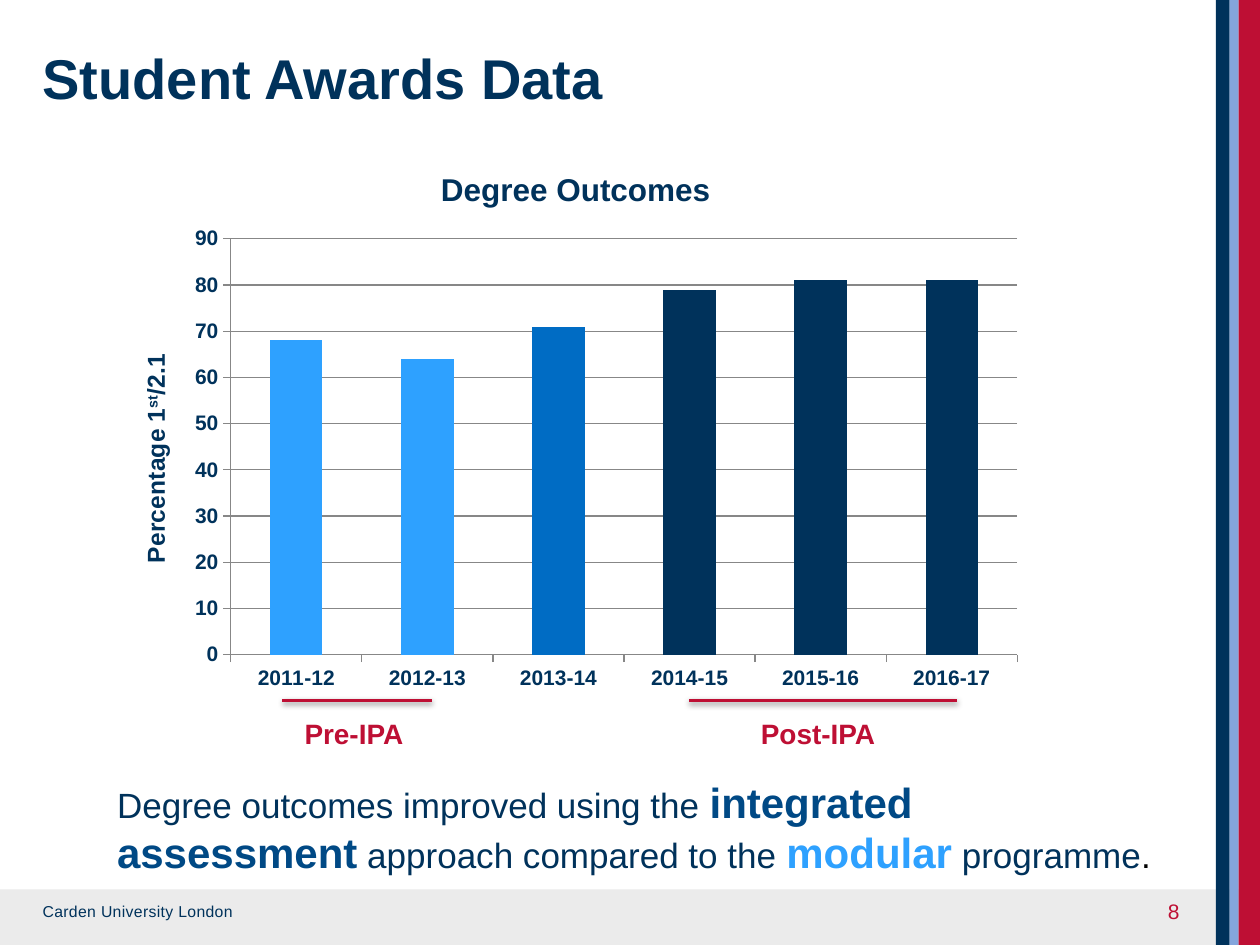
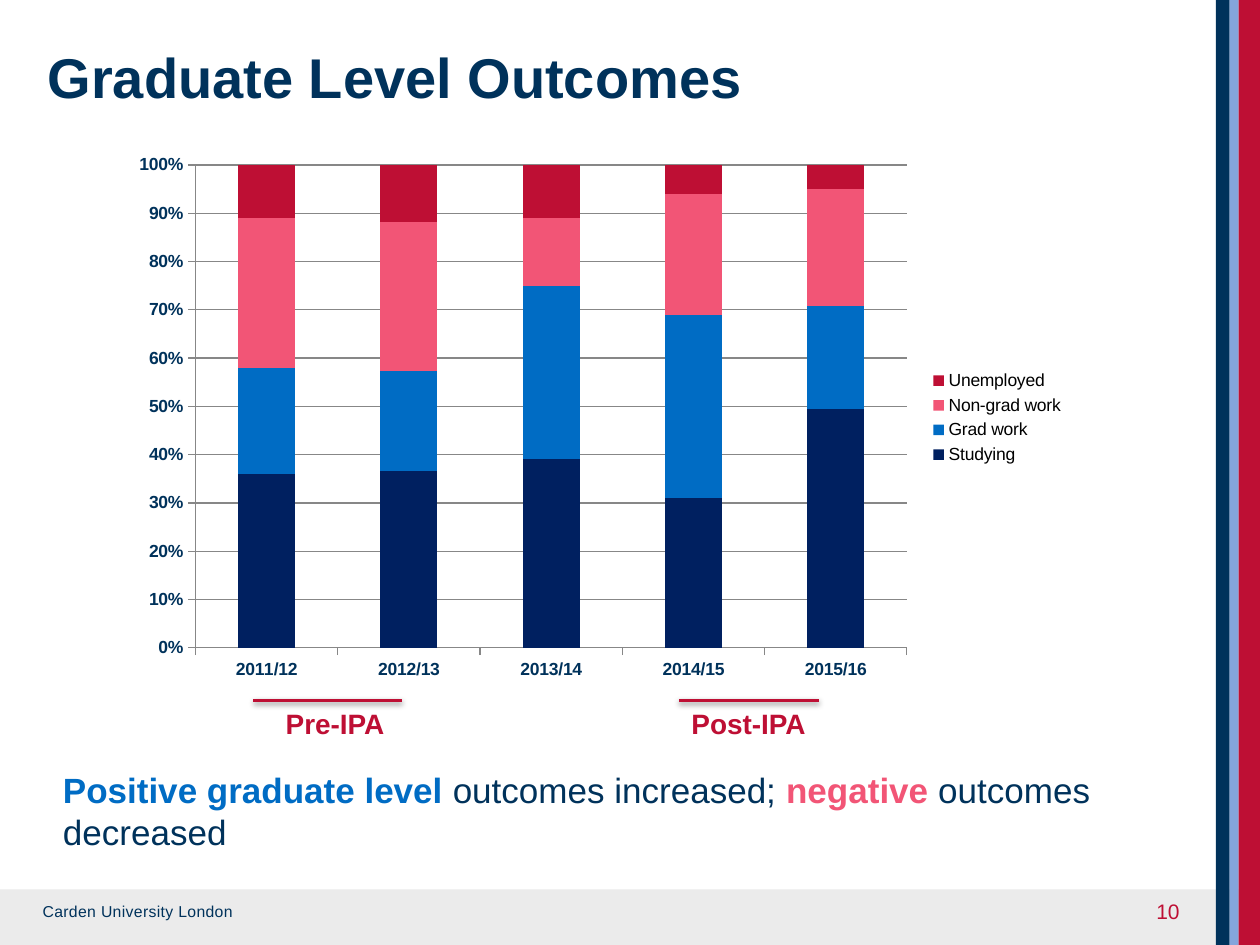
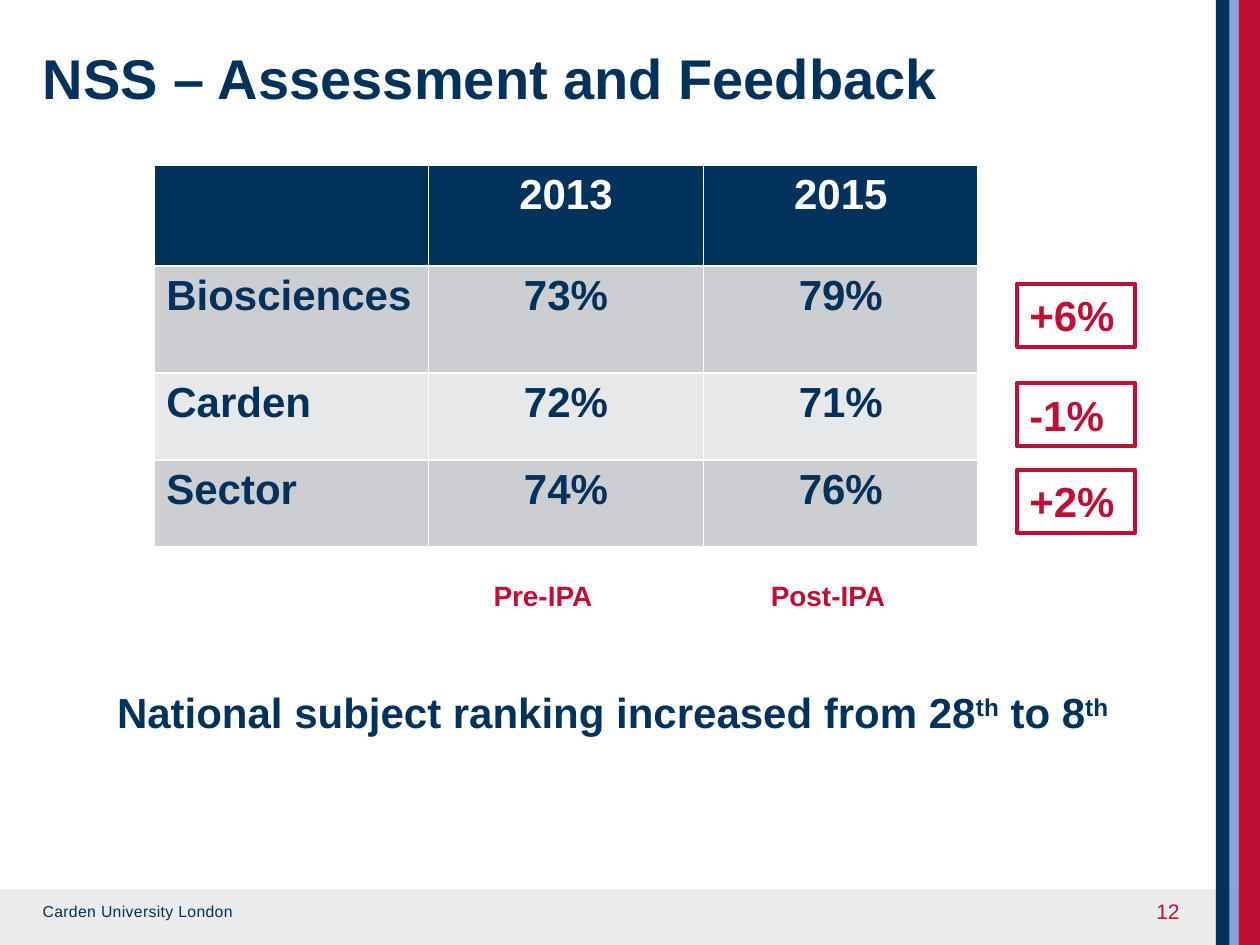
from lxml import etree
from pptx import Presentation
from pptx.chart.data import CategoryChartData
from pptx.dml.color import RGBColor
from pptx.enum.chart import XL_CHART_TYPE, XL_LEGEND_POSITION, XL_TICK_MARK
from pptx.enum.shapes import MSO_CONNECTOR, MSO_SHAPE
from pptx.enum.text import MSO_ANCHOR, PP_ALIGN
from pptx.oxml.ns import qn
from pptx.util import Cm, Pt

RECTANGLE = MSO_SHAPE.RECTANGLE
STRAIGHT = MSO_CONNECTOR.STRAIGHT
LEFT, CENTER, RIGHT = PP_ALIGN.LEFT, PP_ALIGN.CENTER, PP_ALIGN.RIGHT
TOP, MIDDLE = MSO_ANCHOR.TOP, MSO_ANCHOR.MIDDLE
CLUSTERED = XL_CHART_TYPE.COLUMN_CLUSTERED
STACKED = XL_CHART_TYPE.COLUMN_STACKED_100
TICK_OUTSIDE = XL_TICK_MARK.OUTSIDE
LEGEND_RIGHT = XL_LEGEND_POSITION.RIGHT

FONT = "Arial"
NAVY, RED, PALE_BLUE, FOOTER_GREY = "00325B", "BE0F34", "84A5DC", "EBEBEB"
BLUE, BRIGHT_BLUE, DEEP_BLUE, PINK = "006CC4", "2EA1FF", "004985", "F25576"
MIDNIGHT, BLACK, WHITE, GRID_GREY = "002060", "000000", "FFFFFF", "878787"
ROW_FILLS = ("CCCED2", "E7E8EA")

# All areas are (left, top, width, height) in centimetres.
WIDTH, HEIGHT = 25.4, 19.05
FOOTER_TOP = 17.93
FOOTER_TEXT = "Carden University London"
SIDE_BANDS = [(NAVY, 0.28), (PALE_BLUE, 0.18), (RED, 0.43)]
TITLE_AREA = (0.61, 0.76, 23.11, 2.57)
PERIODS = ("Pre-IPA", "Post-IPA")
RULE_TOP = 14.12

# A span is its text and the settings that differ from its paragraph.
AWARDS = {
    "title": "Student Awards Data", "number": 8, "title_area": TITLE_AREA,
    "periods": {"lefts": (5.89, 15.09), "top": 14.33},
    "rules": [(5.69, 8.71), (13.89, 19.3)],
    "summary": {"area": (2.11, 15.52, 21.59, 2.31), "size": 20, "spans": [
        ("Degree outcomes improved using the ", {}),
        ("integrated assessment", {"size": 24, "colour": DEEP_BLUE, "bold": True}),
        (" approach compared to the ", {}),
        ("modular", {"size": 24, "colour": BRIGHT_BLUE, "bold": True}),
        (" programme", {}),
        (".", {"colour": BLACK})]},
}
AWARDS_CHART = {
    "kind": CLUSTERED, "area": (2.31, 2.92, 18.59, 11.2),
    "plot": (0.126, 0.169, 0.853, 0.749), "axis_size": 12,
    "categories": ["2011-12", "2012-13", "2013-14", "2014-15", "2015-16", "2016-17"],
    "series": [("Series 1", [68, 64, 71, 79, 81, 81], NAVY)],
}
AWARDS_CHART_TITLE = [("Degree Outcomes", {})]
AWARDS_AXIS_TITLE = [("Percentage 1", {}), ("st", {"raised": True}), ("/2.1", {})]
AWARDS_BARS = [BRIGHT_BLUE, BRIGHT_BLUE, BLUE, NAVY, NAVY, NAVY]

GRADUATES = {
    "title": "Graduate Level Outcomes", "number": 10,
    "title_area": (0.71, 0.74, 23.11, 2.01),
    "periods": {"lefts": (5.51, 13.69), "top": 14.12},
    "rules": [(5.11, 8.1), (13.69, 16.51)],
    "summary": {"area": (1.02, 15.37, 22.33, 1.96), "size": 20, "spans": [
        ("Positive graduate level ", {"colour": BLUE, "bold": True}),
        ("outcomes increased; ", {}),
        ("negative ", {"colour": PINK, "bold": True}),
        ("outcomes decreased", {})]},
}
GRADUATES_CHART = {
    "kind": STACKED, "area": (2.46, 2.92, 19.25, 11),
    "plot": (0.077, 0.037, 0.745, 0.885), "axis_size": 10,
    "categories": ["2011/12", "2012/13", "2013/14", "2014/15", "2015/16"],
    "series": [
        ("Studying", [36, 37, 39, 31, 49], MIDNIGHT),
        ("Grad work", [22, 21, 36, 38, 21], BLUE),
        ("Non-grad work", [31, 31, 14, 25, 24], PINK),
        ("Unemployed", [11, 12, 11, 6, 5], RED)],
}

SURVEY = {
    "title": "NSS – Assessment and Feedback", "number": 12, "title_area": TITLE_AREA,
    "periods": {"lefts": (9.7, 15.29), "top": 11.53},
    "rules": [],
    "summary": {"area": (2.11, 13.72, 21.59, 1.27), "size": 24, "bold": True, "spans": [
        ("National subject ranking increased from 28", {}), ("th", {"raised": True}),
        (" to 8", {}), ("th", {"raised": True})]},
}
SURVEY_ROWS = [
    ("", "2013", "2015"),
    ("Biosciences", "73%", "79%"),
    ("Carden", "72%", "71%"),
    ("Sector", "74%", "76%"),
]
SURVEY_ROW_HEIGHTS = (2.03, 2.16, 1.75, 1.75)
SURVEY_COLUMN_WIDTH = 5.54
SURVEY_CHANGES = [("+6%", 5.72), ("-1%", 7.72), ("+2%", 9.47)]


def rgb(colour):
    return RGBColor.from_string(colour)


def lengths(area):
    return [Cm(value) for value in area]


def set_font(font, size=None, colour=None, bold=None):
    """Change only the settings that are given."""
    if size:
        font.size = Pt(size)
    if colour:
        font.color.rgb = rgb(colour)
    if bold is not None:
        font.bold = bold


def write(frame, spans, size, colour=NAVY, bold=False, align=LEFT, spacing=None):
    """Fill the first paragraph of a text frame with spans."""
    para = frame.paragraphs[0]
    para.alignment = align
    para.font.name = FONT
    set_font(para.font, size, colour, bold)
    for text, changes in spans:
        span = para.add_run()
        span.text = text
        set_font(span.font, changes.get("size"), changes.get("colour"), changes.get("bold"))
        if changes.get("raised"):
            span._r.get_or_add_rPr().set("baseline", "30000")
        if spacing:
            span._r.get_or_add_rPr().set("spc", str(spacing))


def add_text(page, area, spans, size, anchor=TOP, **style):
    frame = page.shapes.add_textbox(*lengths(area)).text_frame
    frame.word_wrap = True
    frame.vertical_anchor = anchor
    write(frame, spans, size, **style)


def add_band(page, area, colour):
    band = page.shapes.add_shape(RECTANGLE, *lengths(area))
    band.shadow.inherit = False
    band.fill.solid()
    band.fill.fore_color.rgb = rgb(colour)
    band.line.fill.background()


def add_rule(page, start, end):
    """Draw a period rule with a soft shadow below it."""
    rule = page.shapes.add_connector(
        STRAIGHT, Cm(start), Cm(RULE_TOP), Cm(end), Cm(RULE_TOP))
    rule.line.color.rgb = rgb(RED)
    rule.line.width = Pt(2)
    effects = etree.SubElement(rule._element.spPr, qn("a:effectLst"))
    shadow = etree.SubElement(effects, qn("a:outerShdw"), blurRad="40000", dist="20000",
                              dir="5400000", rotWithShape="0")
    tint = etree.SubElement(shadow, qn("a:srgbClr"), val=BLACK)
    etree.SubElement(tint, qn("a:alpha"), val="38000")


def add_page(deck, content):
    """Add a slide with the shared frame, title, period labels and summary."""
    page = deck.slides.add_slide(deck.slide_layouts[6])
    add_band(page, (0, FOOTER_TOP, WIDTH, HEIGHT - FOOTER_TOP), FOOTER_GREY)
    left = WIDTH - sum(width for _, width in SIDE_BANDS)
    for colour, width in SIDE_BANDS:
        add_band(page, (left, 0, width, HEIGHT), colour)
        left += width
    add_text(page, (0.61, 18.06, 4.5, 0.63), [(FOOTER_TEXT, {})], 9, spacing=20)
    add_text(page, (18.11, 17.86, 5.92, 1.02), [(str(content["number"]), {})], 12,
             anchor=MIDDLE, colour=RED, align=RIGHT)
    add_text(page, content["title_area"], [(content["title"], {})], 32, bold=True)

    periods = content["periods"]
    for period, left in zip(PERIODS, periods["lefts"]):
        add_text(page, (left, periods["top"], 3.2, 0.94), [(period, {})], 16,
                 colour=RED, bold=True)
    for start, end in content["rules"]:
        add_rule(page, start, end)
    summary = content["summary"]
    add_text(page, summary["area"], summary["spans"], summary["size"],
             bold=summary.get("bold", False))
    return page


def place_plot(chart, fractions):
    """Fix the inner plot area as fractions of the chart."""
    plot_area = chart._chartSpace.chart.plotArea
    for layout in plot_area.findall(qn("c:layout")):
        plot_area.remove(layout)
    layout = etree.Element(qn("c:layout"))
    plot_area.insert(0, layout)
    manual = etree.SubElement(layout, qn("c:manualLayout"))
    settings = [("layoutTarget", "inner"), ("xMode", "edge"), ("yMode", "edge")]
    settings += zip("xywh", fractions)
    for name, value in settings:
        etree.SubElement(manual, qn("c:" + name), val=str(value))


def add_column_chart(page, content):
    data = CategoryChartData()
    data.categories = content["categories"]
    for name, values, _ in content["series"]:
        data.add_series(name, values)
    chart = page.shapes.add_chart(content["kind"], *lengths(content["area"]), data).chart
    chart.font.name = FONT
    set_font(chart.font, 10, BLACK)
    chart.has_title = False
    chart.has_legend = False
    plot = chart.plots[0]
    plot.vary_by_categories = False
    plot.gap_width = 150
    for series, (_, _, colour) in zip(plot.series, content["series"]):
        series.format.fill.solid()
        series.format.fill.fore_color.rgb = rgb(colour)
    for axis in (chart.category_axis, chart.value_axis):
        axis.major_tick_mark = TICK_OUTSIDE
        set_font(axis.tick_labels.font, content["axis_size"], NAVY, True)
        axis.format.line.color.rgb = rgb(GRID_GREY)
    chart.value_axis.has_major_gridlines = True
    chart.value_axis.major_gridlines.format.line.color.rgb = rgb(GRID_GREY)
    place_plot(chart, content["plot"])
    return chart


def set_number_format(axis, number_format):
    axis.tick_labels.number_format = number_format
    axis.tick_labels.number_format_is_linked = False


def build_awards(deck):
    chart = add_column_chart(add_page(deck, AWARDS), AWARDS_CHART)
    chart.has_title = True
    write(chart.chart_title.text_frame, AWARDS_CHART_TITLE, 18, bold=True, align=CENTER)
    axis = chart.value_axis
    axis.minimum_scale, axis.maximum_scale, axis.major_unit = 0, 90, 10
    set_number_format(axis, "#,##0")
    axis.has_title = True
    write(axis.axis_title.text_frame, AWARDS_AXIS_TITLE, 14, bold=True, align=CENTER)
    for index, colour in enumerate(AWARDS_BARS):
        fill = chart.plots[0].series[0].points[index].format.fill
        fill.solid()
        fill.fore_color.rgb = rgb(colour)


def build_graduates(deck):
    chart = add_column_chart(add_page(deck, GRADUATES), GRADUATES_CHART)
    chart.plots[0].overlap = 100
    set_number_format(chart.value_axis, "0%")
    chart.has_legend = True
    chart.legend.position = LEGEND_RIGHT
    chart.legend.include_in_layout = False


def build_survey(deck):
    page = add_page(deck, SURVEY)
    columns = len(SURVEY_ROWS[0])
    area = (3.1, 3.33, columns * SURVEY_COLUMN_WIDTH, sum(SURVEY_ROW_HEIGHTS))
    table = page.shapes.add_table(len(SURVEY_ROWS), columns, *lengths(area)).table
    for row_index, values in enumerate(SURVEY_ROWS):
        table.rows[row_index].height = Cm(SURVEY_ROW_HEIGHTS[row_index])
        is_header = row_index == 0
        for column_index, value in enumerate(values):
            cell = table.cell(row_index, column_index)
            cell.fill.solid()
            cell.fill.fore_color.rgb = rgb(NAVY if is_header else ROW_FILLS[(row_index - 1) % 2])
            write(cell.text_frame, [(value, {})] if value else [], 24,
                  colour=WHITE if is_header else NAVY, bold=True,
                  align=CENTER if column_index else LEFT)

    for change, top in SURVEY_CHANGES:
        box = page.shapes.add_shape(RECTANGLE, *lengths((20.5, top, 2.39, 1.27)))
        box.shadow.inherit = False
        box.fill.background()
        box.line.color.rgb = rgb(RED)
        box.line.width = Pt(2.25)
        box.text_frame.vertical_anchor = TOP
        write(box.text_frame, [(change, {})], 24, colour=RED, bold=True)


def main():
    deck = Presentation()
    deck.slide_width, deck.slide_height = Cm(WIDTH), Cm(HEIGHT)
    build_awards(deck)
    build_graduates(deck)
    build_survey(deck)
    deck.save("out.pptx")


if __name__ == "__main__":
    main()
